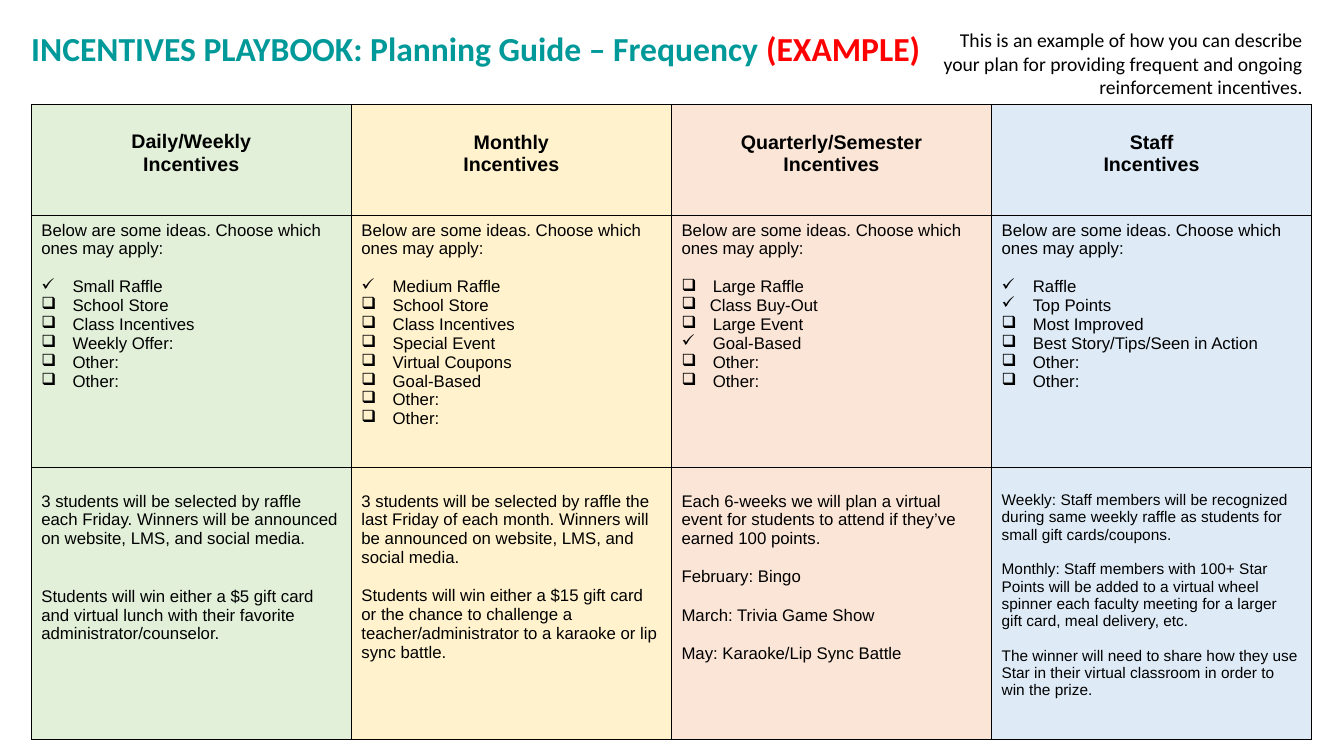
from lxml import etree
from pptx import Presentation
from pptx.dml.color import RGBColor as RGB
from pptx.enum.text import MSO_ANCHOR as ANCHOR, MSO_AUTO_SIZE as FIT, PP_ALIGN as ALIGN
from pptx.oxml import parse_xml
from pptx.oxml.ns import nsdecls, qn
from pptx.util import Inches, Pt

THEME = {
    "teal": "009999", "red": "FF0000", "black": "000000",
    "columns": ["E2F0D9", "FFF2CC", "FBE5D6", "DEEBF7"],
    "heading": "Calibri", "body": "Arial",
    "title": 24, "note": 14, "header": 14, "text": 12, "small": 11,
}
INTRO = "Below are some ideas. Choose which ones may apply:"
HEADERS = ["Daily/Weekly", "Monthly", "Quarterly/Semester", "Staff"]
IDEAS = [
    ["✓Small Raffle", "❑School Store", "❑Class Incentives", "❑Weekly Offer:"],
    ["✓Medium Raffle", "❑School Store", "❑Class Incentives", "❑Special Event",
     "❑Virtual Coupons", "❑Goal-Based"],
    ["❑Large Raffle", "❑Class Buy-Out", "❑Large Event", "✓Goal-Based"],
    ["✓Raffle", "✓Top Points", "❑Most Improved", "❑Best Story/Tips/Seen in Action"],
]
PLANS = [
    ["3 students will be selected by raffle each Friday. Winners will be announced "
     "on website, LMS, and social media.",
     "Students will win either a $5 gift card and virtual lunch with their favorite "
     "administrator/counselor."],
    ["3 students will be selected by raffle the last Friday of each month. Winners will "
     "be announced on website, LMS, and social media.",
     "Students will win either a $15 gift card or the chance to challenge a "
     "teacher/administrator to a karaoke or lip sync battle."],
    ["Each 6-weeks we will plan a virtual event for students to attend if they’ve "
     "earned 100 points.",
     "February: Bingo", "March: Trivia Game Show", "May: Karaoke/Lip Sync Battle"],
    ["Weekly: Staff members will be recognized during same weekly raffle as students "
     "for small gift cards/coupons.",
     "Monthly: Staff members with 100+ Star Points will be added to a virtual wheel "
     "spinner each faculty meeting for a larger gift card, meal delivery, etc.",
     "The winner will need to share how they use Star in their virtual classroom in "
     "order to win the prize."],
]


def add_run(p, text, size, font, color, bold=False):
    r = p.add_run()
    r.text = text
    r.font.color.rgb = RGB.from_string(color)
    for name, value in {"size": Pt(size), "name": font, "bold": bold}.items():
        setattr(r.font, name, value)


def add_lines(tf, lines, size, bold=False, gap=0, **formats):
    for i, line in enumerate(lines):
        p = tf.paragraphs[0] if i == 0 and not tf.text else tf.add_paragraph()
        for name, value in formats.items():
            setattr(p, name, value)
        if i:
            p.space_before = Pt(gap)
        add_run(p, line, size, THEME["body"], THEME["black"], bold)


prs = Presentation()
prs.slide_width, prs.slide_height = Inches(13.33), Inches(7.5)
s = prs.slides.add_slide(prs.slide_layouts[5])

title = s.shapes.title
for name, value in {"left": 0.21, "top": 0.23, "width": 12.81, "height": 0.81}.items():
    setattr(title, name, Inches(value))
tf = title.text_frame
for name, value in {"auto_size": FIT.NONE, "word_wrap": True,
                    "vertical_anchor": ANCHOR.TOP}.items():
    setattr(tf, name, value)
p = tf.paragraphs[0]
p.alignment = ALIGN.LEFT
for text, color in [("INCENTIVES PLAYBOOK: Planning Guide – Frequency ", "teal"),
                    ("(EXAMPLE)", "red")]:
    add_run(p, text, THEME["title"], THEME["heading"], THEME[color], True)

table = s.shapes.add_table(3, 4, Inches(0.31), Inches(1.04), Inches(12.7), Inches(6.3)).table
table.first_row = table.horz_banding = False
for column in table.columns:
    column.width = Inches(12.7 / 4)
for row, height in zip(table.rows, [1.1, 2.5, 2.7]):
    row.height = Inches(height)

for c, color in enumerate(THEME["columns"]):
    header, ideas, plan = [table.cell(r, c) for r in range(3)]
    for cell in (header, ideas, plan):
        tcPr = cell._tc.get_or_add_tcPr()
        for side in ("lnL", "lnR", "lnT", "lnB"):
            tcPr.append(parse_xml(
                f'<a:{side} {nsdecls("a")} w="12700"><a:solidFill>'
                f'<a:srgbClr val="{THEME["black"]}"/></a:solidFill></a:{side}>'))
        cell.fill.solid()
        cell.fill.fore_color.rgb = RGB.from_string(color)

    header.margin_top = Inches(0.27 if c else 0.24)
    add_lines(header.text_frame, [HEADERS[c], "Incentives"], THEME["header"], True,
              alignment=ALIGN.CENTER, line_spacing=1.0 if c else 1.07)

    tf = ideas.text_frame
    add_lines(tf, [INTRO], THEME["text"])
    choices = IDEAS[c] + ["❑Other:"] * 2
    add_lines(tf, [choice[1:] for choice in choices], THEME["text"])
    tf.paragraphs[1].space_before = Pt(THEME["text"] * 1.15)
    for p, choice in zip(tf.paragraphs[1:], choices):
        indent = Inches(0.28 if p.text == "Class Buy-Out" else 0.31)
        pPr = p._p.get_or_add_pPr()
        pPr.set("marL", str(indent))
        pPr.set("indent", str(-indent))
        etree.SubElement(pPr, qn("a:buChar")).set("char", choice[0])

    plan.margin_top = Inches(0.24)
    size = THEME["small"] if c == 3 else THEME["text"]
    blank_lines = 1 if c else 2
    add_lines(plan.text_frame, PLANS[c], size, gap=size * 1.15 * blank_lines)

note = s.shapes.add_textbox(Inches(9.05), Inches(0.23), Inches(3.97), Inches(0.81))
tf = note.text_frame
tf.word_wrap = True
p = tf.paragraphs[0]
p.alignment = ALIGN.RIGHT
add_run(p, "This is an example of how you can describe your plan for providing frequent "
        "and ongoing reinforcement incentives.", THEME["note"], THEME["heading"], THEME["black"])

prs.save("out.pptx")
